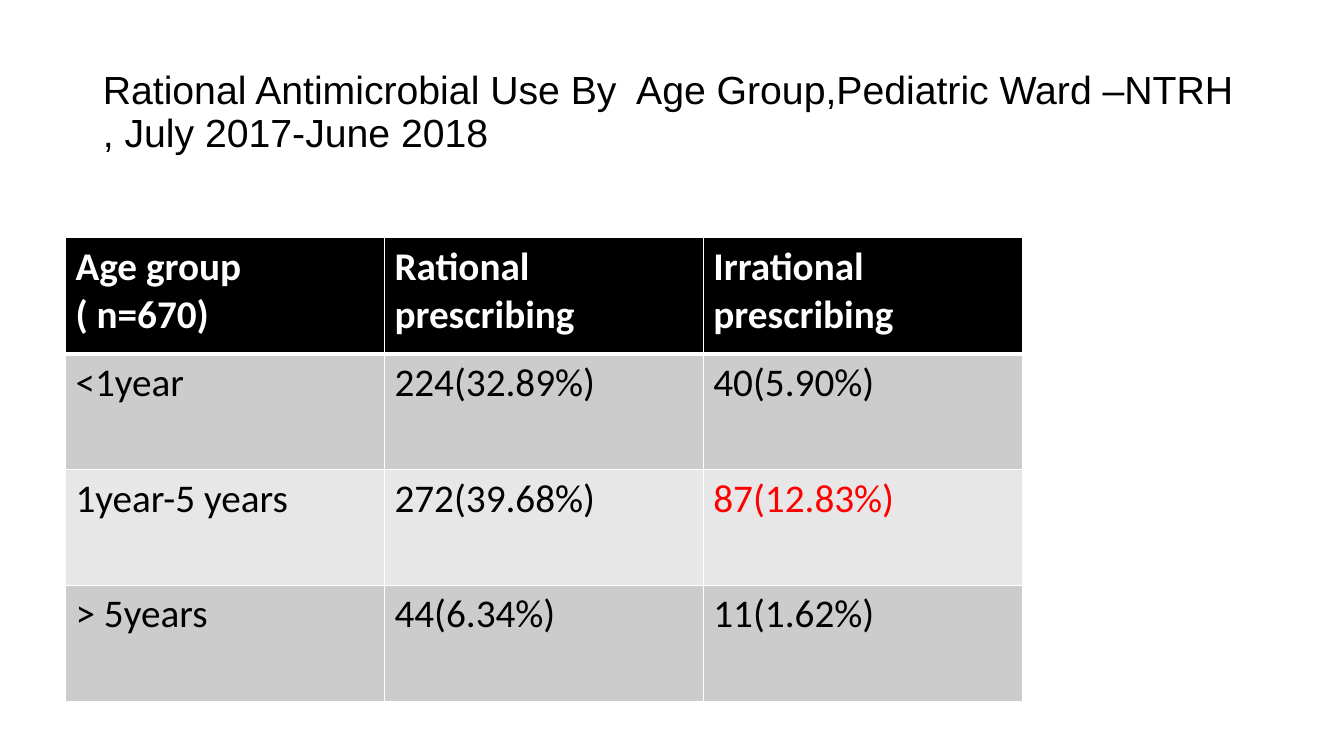
from lxml.etree import SubElement
from pptx import Presentation
from pptx.dml.color import RGBColor
from pptx.enum.text import MSO_ANCHOR, MSO_AUTO_SIZE, PP_ALIGN
from pptx.oxml.ns import qn
from pptx.util import Inches, Pt

BLACK = RGBColor(0x00, 0x00, 0x00)
WHITE = RGBColor(0xFF, 0xFF, 0xFF)
RED = RGBColor(0xFF, 0x00, 0x00)
DARK_BAND = RGBColor(0xCC, 0xCC, 0xCC)
LIGHT_BAND = RGBColor(0xE7, 0xE7, 0xE7)

TITLE = "Rational Antimicrobial Use By  Age Group,Pediatric Ward –NTRH , July 2017-June 2018"
ROWS = [
    ("Age group ( n=670)", "Rational prescribing", "Irrational prescribing"),
    ("<1year", "224(32.89%)", "40(5.90%)"),
    ("1year-5 years", "272(39.68%)", "87(12.83%)"),
    ("> 5years", "44(6.34%)", "11(1.62%)"),
]
HIGHLIGHT = (2, 2)  # row and column of the highest irrational share

# Boxes: left, top, width, height
TITLE_BOX = [Inches(n) for n in (0.92, 0.4, 11.5, 1.45)]
TABLE_BOX = [Inches(n) for n in (0.65, 2.36, 9.49, 4.6)]


def format_paragraph(paragraph, font_name, color, bold=False):
    for run in paragraph.runs:
        run.font.name = font_name
        run.font.size = Pt(28)
        run.font.bold = bold
        run.font.color.rgb = color


def add_title(slide, box):
    title = slide.shapes.title
    title.left, title.top, title.width, title.height = box
    text_frame = title.text_frame
    text_frame.text = TITLE
    text_frame.word_wrap = True
    text_frame.auto_size = MSO_AUTO_SIZE.NONE
    text_frame.vertical_anchor = MSO_ANCHOR.MIDDLE
    paragraph = text_frame.paragraphs[0]
    paragraph.alignment = PP_ALIGN.LEFT
    paragraph.line_spacing = 0.9
    format_paragraph(paragraph, "Arial", BLACK)


def set_borders(cell, top=1, bottom=1):
    properties = cell._tc.get_or_add_tcPr()
    for side, width in (("L", 1), ("R", 1), ("T", top), ("B", bottom)):
        line = SubElement(properties, qn(f"a:ln{side}"), w=str(Pt(width)))
        fill = SubElement(line, qn("a:solidFill"))
        SubElement(fill, qn("a:srgbClr"), val=str(WHITE))


def add_age_table(slide, box):
    table = slide.shapes.add_table(len(ROWS), len(ROWS[0]), *box).table
    for row, texts in enumerate(ROWS):
        header = row == 0
        band = BLACK if header else (DARK_BAND if row % 2 else LIGHT_BAND)
        for column, text in enumerate(texts):
            cell = table.cell(row, column)
            # The rule under the header is heavier than the rest
            set_borders(cell, top=3 if row == 1 else 1, bottom=3 if header else 1)
            cell.fill.solid()
            cell.fill.fore_color.rgb = band
            cell.text_frame.text = text
            color = WHITE if header else BLACK
            if (row, column) == HIGHLIGHT:
                color = RED
            format_paragraph(cell.text_frame.paragraphs[0], "Calibri", color, header)


def main():
    presentation = Presentation()
    presentation.slide_width = Inches(13.33)
    presentation.slide_height = Inches(7.5)
    title_only = presentation.slide_layouts[5]
    slide = presentation.slides.add_slide(title_only)
    add_title(slide, TITLE_BOX)
    add_age_table(slide, TABLE_BOX)
    presentation.save("out.pptx")


if __name__ == "__main__":
    main()
